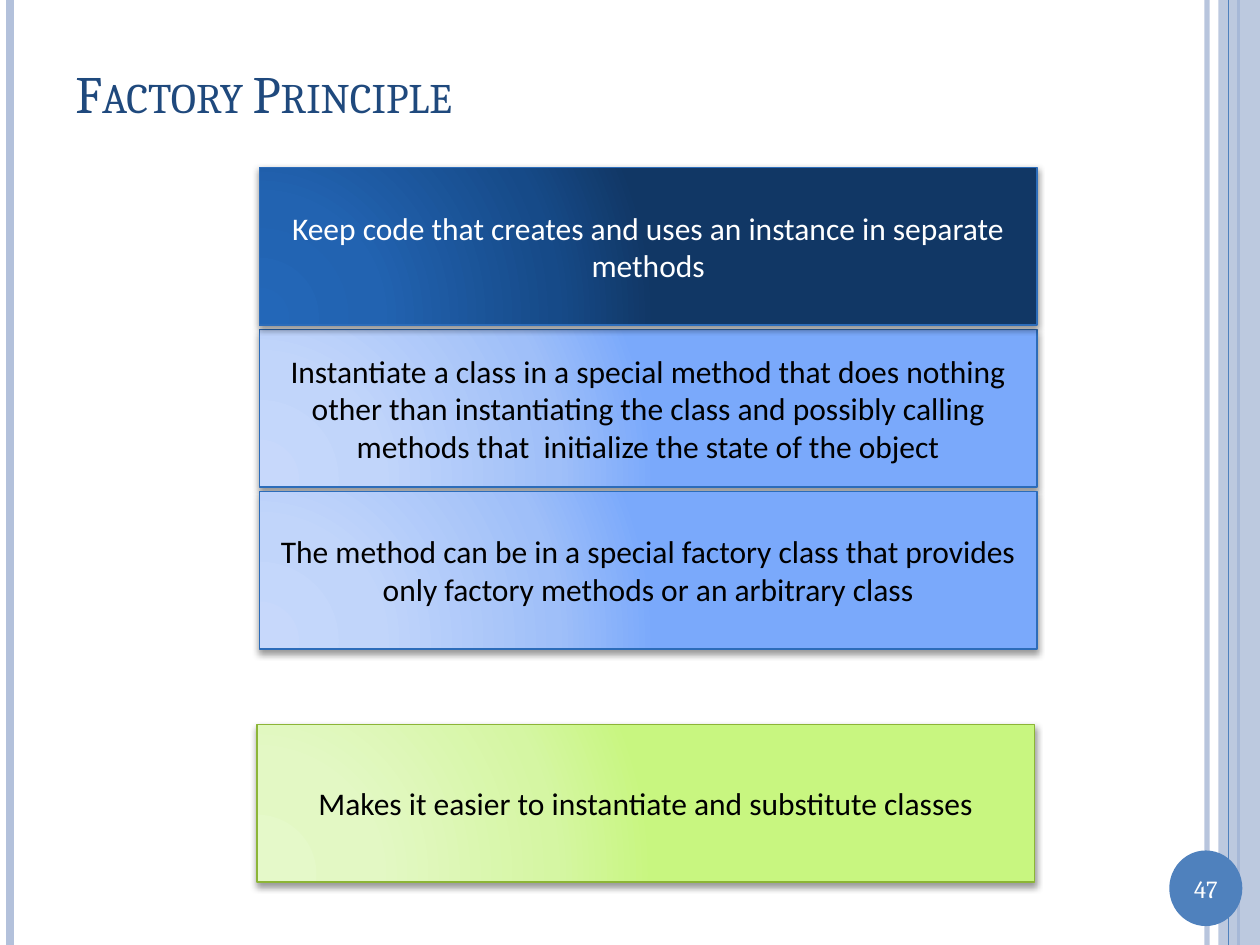
from dataclasses import dataclass

from pptx import Presentation
from pptx.dml.color import RGBColor
from pptx.enum.shapes import MSO_CONNECTOR, MSO_SHAPE
from pptx.enum.text import MSO_ANCHOR, PP_ALIGN
from pptx.oxml import parse_xml
from pptx.oxml.ns import nsdecls, qn
from pptx.util import Inches, Pt

RECT, OVAL = MSO_SHAPE.RECTANGLE, MSO_SHAPE.OVAL
STRAIGHT = MSO_CONNECTOR.STRAIGHT
LEFT, CENTER = PP_ALIGN.LEFT, PP_ALIGN.CENTER
MIDDLE = MSO_ANCHOR.MIDDLE
WIDE, HIGH = 10, 7.5


@dataclass(frozen=True)
class Tone:
    stops: tuple
    edge: str
    ink: str
    shade: int = 40  # shadow opacity, percent
    drop: float = 2  # shadow distance, points


@dataclass(frozen=True)
class Theme:
    head: str = "Cambria"
    body: str = "Calibri"
    title: int = 30
    text: int = 18
    num: int = 14
    navy: str = "1F497D"
    blue: str = "4F81BD"
    pale: str = "B3C1DB"
    white: str = "FFFFFF"
    dark: Tone = Tone(("2367B8", "2263B1", "164A88", "113765"), "2C6CB9", "FFFFFF", 42, 1.6)
    light: Tone = Tone(("C7D8FB", "C1D5FA", "9FBFF9", "7AA9FB"), "2C6CB9", "000000")
    green: Tone = Tone(("E5F9C9", "E3F8C4", "D5F6A3", "C8F680"), "8CB537", "000000")


THEME = Theme()


def rgb(code):
    return RGBColor.from_string(code)


def fade(color, share):
    """Make a solid colour partly clear; share is its opacity in percent."""
    node = parse_xml(f'<a:alpha {nsdecls("a")} val="{share * 1000}"/>')
    color.find(qn("a:srgbClr")).append(node)


def write(shape, text, font, size, ink, align=CENTER, inset=0.05):
    frame = shape.text_frame
    frame.word_wrap = True
    frame.vertical_anchor = MIDDLE
    frame.margin_left = frame.margin_right = Inches(inset)
    frame.margin_top = frame.margin_bottom = Inches(0.05)
    para = frame.paragraphs[0]
    para.alignment = align
    run = para.add_run()
    run.text = text
    run.font.name = font
    run.font.size = Pt(size)
    run.font.color.rgb = rgb(ink)
    return run


def plain(slide, kind, box, color):
    shape = slide.shapes.add_shape(kind, *map(Inches, box))
    shape.shadow.inherit = False
    shape.fill.solid()
    shape.fill.fore_color.rgb = rgb(color)
    shape.line.fill.background()
    return shape


def rule(slide, x, color, width, share=100):
    """Draw a line down the full height of the slide."""
    line = slide.shapes.add_connector(STRAIGHT, Inches(x), 0, Inches(x), Inches(HIGH))
    line.line.color.rgb = rgb(color)
    line.line.width = Pt(width)
    props = line._element.spPr
    props.append(parse_xml(f'<a:effectLst {nsdecls("a")}/>'))
    if share < 100:
        fade(props.find(qn("a:ln")).find(qn("a:solidFill")), share)


def frame(slide):
    rule(slide, 9.58, THEME.pale, 3, 93)
    rule(slide, 0.08, THEME.pale, 4.5)
    rule(slide, 9.83, THEME.blue, 1.5)
    band = plain(slide, RECT, (9.67, 0, WIDE - 9.67, HIGH), THEME.pale)
    fade(band._element.spPr.find(qn("a:solidFill")), 87)
    rule(slide, 9.75, THEME.blue, 0.75)


def badge(slide, box, num):
    plain(slide, OVAL, box, THEME.blue)
    x, y, w, h = box
    label = slide.shapes.add_textbox(*map(Inches, (x, y + 0.13, w, h - 0.26)))
    write(label, num, THEME.head, THEME.num, THEME.white)


def title(slide, box, text):
    label = slide.shapes.add_textbox(*map(Inches, box))
    run = write(label, text, THEME.head, THEME.title, THEME.navy, LEFT, 0.1)
    run.font._element.set("cap", "small")


def panel(slide, box, text, tone):
    """Place a text box with a round gradient and a soft shadow below."""
    shape = plain(slide, RECT, box, tone.edge)
    shape.line.color.rgb = rgb(tone.edge)
    shape.line.width = Pt(1)
    props = shape._element.spPr
    stops = "".join(
        f'<a:gs pos="{pos * 1000}"><a:srgbClr val="{color}"/></a:gs>'
        for pos, color in zip((0, 30, 75, 100), tone.stops)
    )
    blend = parse_xml(
        f'<a:gradFill {nsdecls("a")} rotWithShape="1"><a:gsLst>{stops}</a:gsLst>'
        '<a:path path="circle"><a:fillToRect l="5000" t="100000" r="120000" b="10000"/>'
        "</a:path></a:gradFill>"
    )
    props.replace(props.find(qn("a:solidFill")), blend)
    props.find(qn("a:effectLst")).append(parse_xml(
        f'<a:outerShdw {nsdecls("a")} blurRad="{Pt(4)}" dist="{Pt(tone.drop)}" '
        'dir="5400000" rotWithShape="0"><a:srgbClr val="000000">'
        f'<a:alpha val="{tone.shade * 1000}"/></a:srgbClr></a:outerShdw>'
    ))
    write(shape, text, THEME.body, THEME.text, tone.ink)


def stack(slide, box, lead, points, tall=1.25):
    """Spread the lead and its points evenly; the lead lies on top."""
    x, y, w, h = box
    step = (h - tall) / len(points)
    for row, text in enumerate(points, 1):
        panel(slide, (x, y + row * step, w, tall), text, THEME.light)
    panel(slide, (x, y, w, tall), lead, THEME.dark)


def main():
    deck = Presentation()
    deck.slide_width, deck.slide_height = Inches(WIDE), Inches(HIGH)
    slide = deck.slides.add_slide(deck.slide_layouts[6])
    frame(slide)
    badge(slide, (9.28, 6.75, 0.58, 0.6), "47")
    title(slide, (0.5, 0.3, 8.67, 0.87), "Factory Principle")
    panel(slide, (2.04, 5.75, 6.17, 1.25),
          "Makes it easier to instantiate and substitute classes", THEME.green)
    stack(
        slide, (2.06, 1.33, 6.17, 3.82),
        "Keep code that creates and uses an instance in separate methods",
        (
            "Instantiate a class in a special method that does nothing other than "
            "instantiating the class and possibly calling methods that  initialize "
            "the state of the object",
            "The method can be in a special factory class that provides only "
            "factory methods or an arbitrary class",
        ),
    )
    deck.save("out.pptx")


if __name__ == "__main__":
    main()
